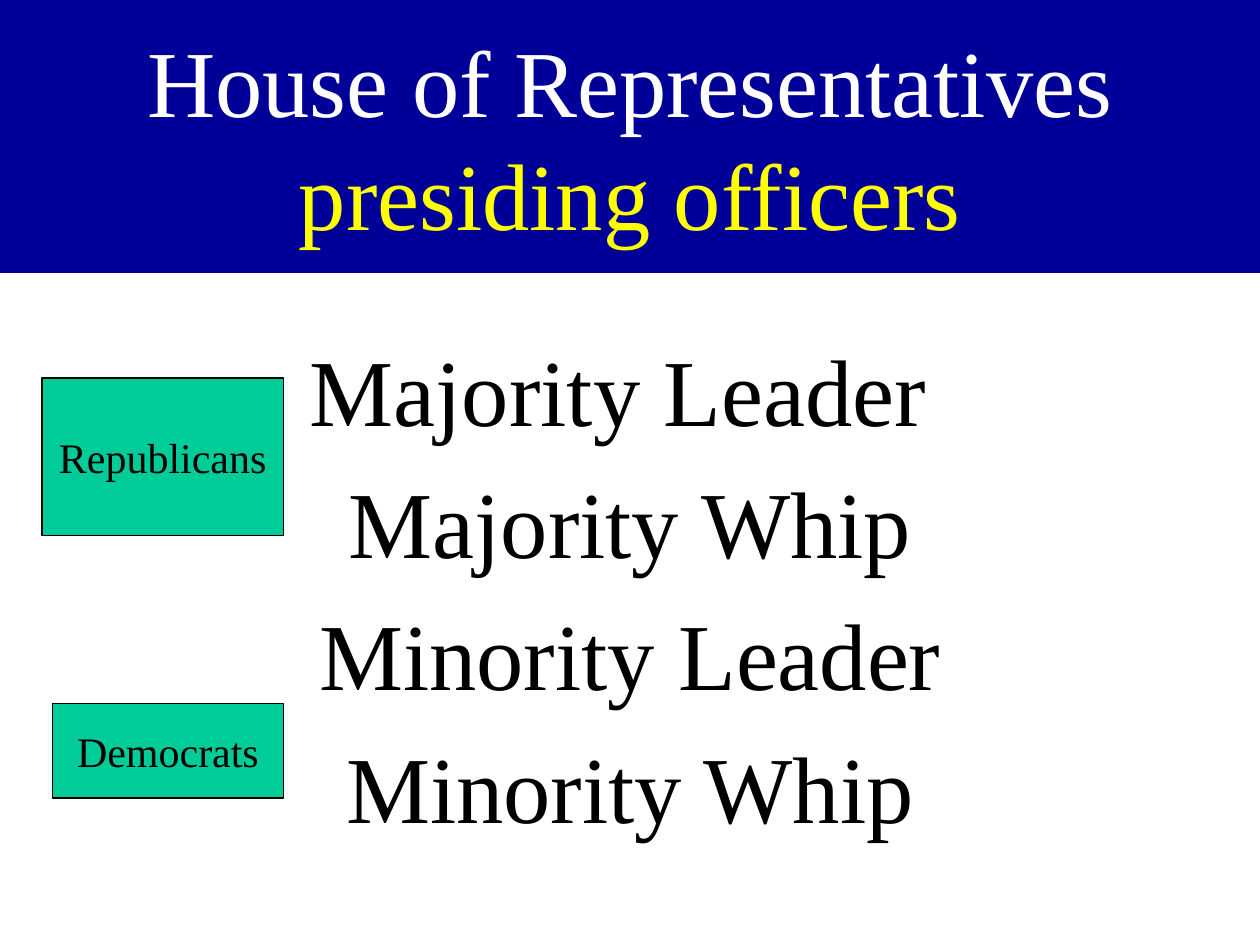
from dataclasses import dataclass
from pptx import Presentation
from pptx import util as u
from pptx.dml.color import RGBColor
from pptx.enum import shapes, text


@dataclass(frozen=True)
class Theme:
    font: str = "Times New Roman"
    big: float = 54
    small: float = 24
    gap: float = 10.8
    edge: float = 0.75
    navy: str = "000099"
    green: str = "00CC99"
    white: str = "FFFFFF"
    gold: str = "FFFF00"
    black: str = "000000"


@dataclass(frozen=True)
class Area:
    col: float
    row: float
    wide: float
    high: float


@dataclass(frozen=True)
class Party:
    name: str
    area: Area


LOOK = Theme()
COLS, ROWS = 120, 90
BAND = Area(0, 0, COLS, 26)
BODY = Area(4, 31, 112, 55)
ROLES = ("Majority Leader ", "Majority Whip", "Minority Leader", "Minority Whip")
PARTIES = (
    Party("Republicans", Area(4, 36, 23, 15)),
    Party("Democrats", Area(5, 67, 22, 9)),
)

deck = Presentation()
deck.slide_width, deck.slide_height = u.Inches(10), u.Inches(7.5)


def frame(area: Area) -> tuple[int, int, int, int]:
    cell, line = deck.slide_width / COLS, deck.slide_height / ROWS
    return (round(area.col * cell), round(area.row * line),
            round(area.wide * cell), round(area.high * line))


def place(shape, area: Area) -> None:
    shape.left, shape.top, shape.width, shape.height = frame(area)


def paint(shape, color: str) -> None:
    shape.fill.solid()
    shape.fill.fore_color.rgb = RGBColor.from_string(color)


def setup(shape, anchor, wrap: bool = True):
    box = shape.text_frame
    box.auto_size = text.MSO_AUTO_SIZE.NONE
    box.word_wrap = wrap
    box.vertical_anchor = anchor
    return box


def write(para, words: str, size: float, color: str) -> None:
    para.alignment = text.PP_ALIGN.CENTER
    run = para.add_run()
    run.text = words
    run.font.name = LOOK.font
    run.font.size = u.Pt(size)
    run.font.color.rgb = RGBColor.from_string(color)


def banner(shape) -> None:
    place(shape, BAND)
    paint(shape, LOOK.navy)
    para = setup(shape, text.MSO_ANCHOR.MIDDLE).paragraphs[0]
    write(para, "House of Representatives", LOOK.big, LOOK.white)
    para.add_line_break()
    write(para, "presiding officers", LOOK.big, LOOK.gold)


def roster(shape) -> None:
    place(shape, BODY)
    box = setup(shape, text.MSO_ANCHOR.TOP)
    for rank, role in enumerate(ROLES):
        para = box.add_paragraph() if rank else box.paragraphs[0]
        para.space_before = u.Pt(LOOK.gap)
        write(para, role, LOOK.big, LOOK.black)


def badge(slide, party: Party) -> None:
    shape = slide.shapes.add_shape(
        shapes.MSO_SHAPE.RECTANGLE, *frame(party.area))
    shape.shadow.inherit = False
    paint(shape, LOOK.green)
    shape.line.color.rgb = RGBColor.from_string(LOOK.black)
    shape.line.width = u.Pt(LOOK.edge)
    box = setup(shape, text.MSO_ANCHOR.MIDDLE, False)
    write(box.paragraphs[0], party.name, LOOK.small, LOOK.black)


def main() -> None:
    slide = deck.slides.add_slide(deck.slide_layouts[0])
    banner(slide.shapes.title)
    roster(slide.placeholders[1])
    for party in PARTIES:
        badge(slide, party)
    deck.save("out.pptx")


if __name__ == "__main__":
    main()
